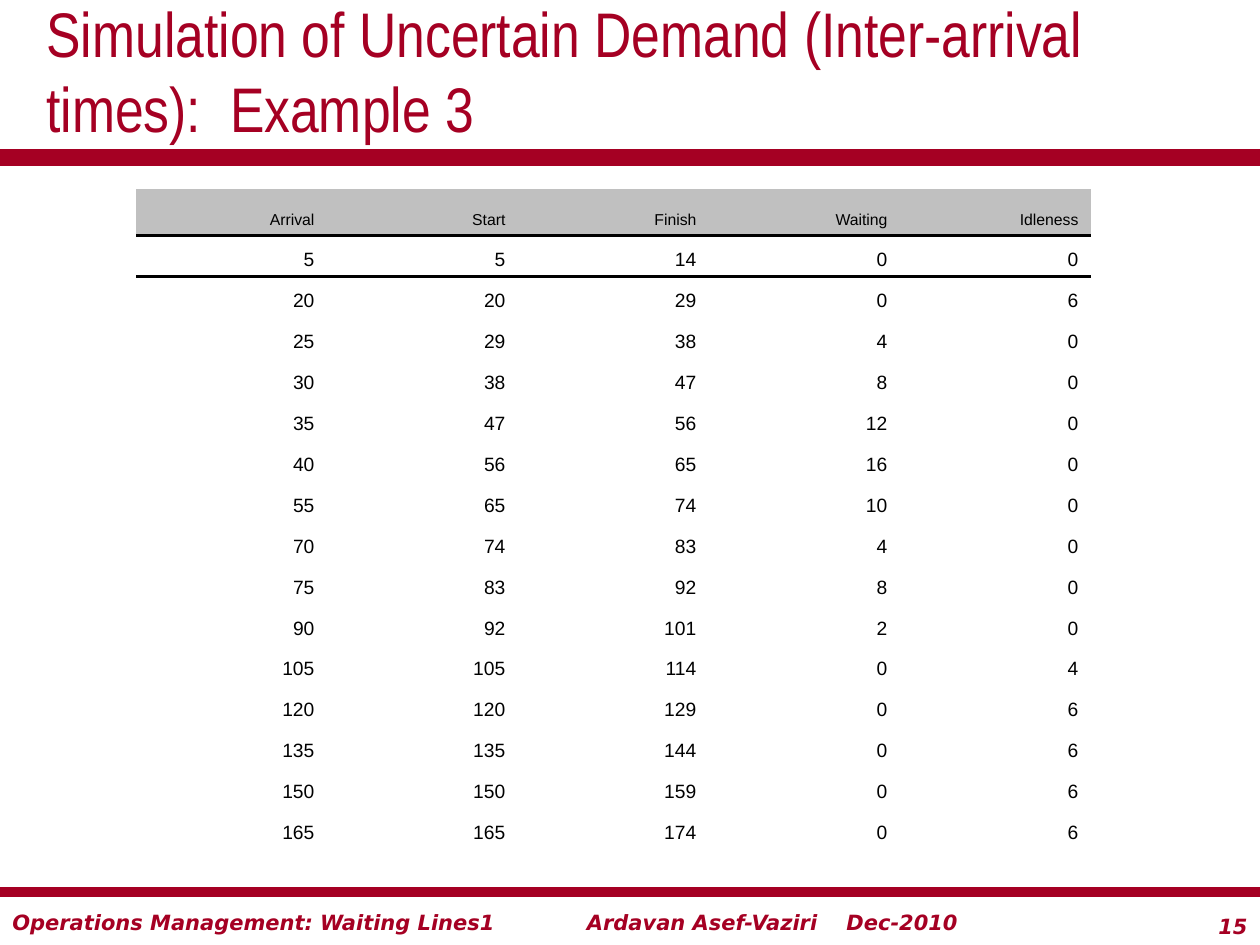
from dataclasses import dataclass
from typing import NamedTuple

from lxml.etree import SubElement
from pptx import Presentation
from pptx.dml.color import RGBColor
from pptx.enum.shapes import MSO_CONNECTOR
from pptx.enum.text import MSO_ANCHOR, PP_ALIGN
from pptx.oxml.ns import qn
from pptx.util import Inches, Pt


class TextStyle(NamedTuple):
    font: str
    size: int
    color: RGBColor
    emphasis: bool = False  # bold and italic together


@dataclass(frozen=True)
class Theme:
    crimson: RGBColor = RGBColor(0xA5, 0x00, 0x23)
    black: RGBColor = RGBColor(0, 0, 0)
    header_fill: RGBColor = RGBColor(0xC0, 0xC0, 0xC0)
    title: TextStyle = TextStyle("Arial Narrow", 36, crimson)
    footer: TextStyle = TextStyle("DejaVu Sans", 12, crimson, True)
    header: TextStyle = TextStyle("Arial", 9, black)
    body: TextStyle = TextStyle("Arial", 11, black)
    plain_table: str = "{2D5ABB26-0587-4C30-8999-92F81FD0307C}"


class Label(NamedTuple):
    text: str
    left: float
    top: float
    width: float
    height: float
    style: TextStyle
    align: PP_ALIGN = PP_ALIGN.LEFT
    anchor: MSO_ANCHOR = MSO_ANCHOR.TOP
    tab: float = 0


class Rule(NamedTuple):
    y: float
    weight: int


class Customer(NamedTuple):
    arrival: int
    start: int
    finish: int
    waiting: int
    idleness: int


THEME = Theme()
SLIDE_WIDTH, SLIDE_HEIGHT = 10, 7.5
SERVICE_TIME = 9
ARRIVALS = [5, 20, 25, 30, 35, 40, 55, 70, 75, 90, 105, 120, 135, 150, 165]

RULES = [Rule(1.25, 10), Rule(7.08, 6)]
LABELS = [
    Label("15", 9.25, 7.2, 0.75, 0.3, THEME.footer, PP_ALIGN.RIGHT),
    Label("Ardavan Asef-Vaziri\tDec-2010", 4.56, 7.17, 3.35, 0.3,
          THEME.footer, tab=2.06),
    Label("Operations Management: Waiting Lines1", 0, 7.17, 4.67, 0.3, THEME.footer),
    Label("Simulation of Uncertain Demand (Inter-arrival times):  Example 3",
          0.27, 0, 9.73, 1.11, THEME.title, anchor=MSO_ANCHOR.MIDDLE),
]


def simulate(arrivals: list[int]) -> list[Customer]:
    """Serve customers one at a time, in order of arrival."""
    customers = []
    free_at = arrivals[0]
    for arrival in arrivals:
        start = max(arrival, free_at)
        finish = start + SERVICE_TIME
        customers.append(
            Customer(arrival, start, finish, start - arrival, start - free_at))
        free_at = finish
    return customers


def style_paragraph(paragraph, style: TextStyle, align: PP_ALIGN) -> None:
    paragraph.alignment = align
    for run in paragraph.runs:
        run.font.name = style.font
        run.font.size = Pt(style.size)
        run.font.color.rgb = style.color
        run.font.bold = run.font.italic = style.emphasis


def add_rule(slide, rule: Rule) -> None:
    y = Inches(rule.y)
    line = slide.shapes.add_connector(
        MSO_CONNECTOR.STRAIGHT, 0, y, Inches(SLIDE_WIDTH), y)
    line.line.color.rgb = THEME.crimson
    line.line.width = Pt(rule.weight)
    SubElement(line._element.spPr, qn("a:effectLst"))


def add_label(slide, label: Label) -> None:
    box = slide.shapes.add_textbox(
        Inches(label.left), Inches(label.top), Inches(label.width), Inches(label.height))
    frame = box.text_frame
    frame.word_wrap = True
    frame.vertical_anchor = label.anchor
    frame.text = label.text
    paragraph = frame.paragraphs[0]
    style_paragraph(paragraph, label.style, label.align)
    if label.tab:
        tabs = SubElement(paragraph._p.get_or_add_pPr(), qn("a:tabLst"))
        SubElement(tabs, qn("a:tab"), pos=str(Inches(label.tab)), algn="l")


def add_border(cell, side: str) -> None:
    """Draw one cell edge; its element must come before the cell's fill."""
    properties = cell._tc.get_or_add_tcPr()
    edge = SubElement(properties, qn(f"a:{side}"), w=str(Pt(2)))
    fill = SubElement(edge, qn("a:solidFill"))
    SubElement(fill, qn("a:srgbClr"), val=str(THEME.black))
    properties.insert(0, edge)


def fill_cell(cell, text: str, style: TextStyle) -> None:
    cell.text = text
    cell.vertical_anchor = MSO_ANCHOR.BOTTOM
    paragraph = cell.text_frame.paragraphs[0]
    paragraph.line_spacing = 1.15
    style_paragraph(paragraph, style, PP_ALIGN.RIGHT)


def add_simulation_table(slide, customers: list[Customer]) -> None:
    headings = [field.capitalize() for field in Customer._fields]
    width, height, header_height = 7.58, 5.25, 0.37
    table = slide.shapes.add_table(
        len(customers) + 1, len(headings),
        Inches(1.08), Inches(1.5), Inches(width), Inches(height)).table
    table.first_row = table.horz_banding = False
    table._tbl.tblPr.find(qn("a:tableStyleId")).text = THEME.plain_table

    # Even columns, and even rows below the header
    for column in table.columns:
        column.width = Inches(width / len(headings))
    for row in table.rows:
        row.height = Inches((height - header_height) / len(customers))
    table.rows[0].height = Inches(header_height)

    # Header row, with a line between it and the first customer
    for column, heading in enumerate(headings):
        cell = table.cell(0, column)
        fill_cell(cell, heading, THEME.header)
        cell.fill.solid()
        cell.fill.fore_color.rgb = THEME.header_fill
        add_border(cell, "lnB")

    # One row per customer
    for row, customer in enumerate(customers, start=1):
        for column, value in enumerate(customer):
            cell = table.cell(row, column)
            fill_cell(cell, str(value), THEME.body)
            cell.fill.background()
            if row == 1:
                add_border(cell, "lnT")


def main() -> None:
    presentation = Presentation()
    presentation.slide_width = Inches(SLIDE_WIDTH)
    presentation.slide_height = Inches(SLIDE_HEIGHT)
    slide = presentation.slides.add_slide(presentation.slide_layouts[6])

    for rule in RULES:
        add_rule(slide, rule)
    for label in LABELS:
        add_label(slide, label)
    add_simulation_table(slide, simulate(ARRIVALS))

    presentation.save("out.pptx")


if __name__ == "__main__":
    main()
